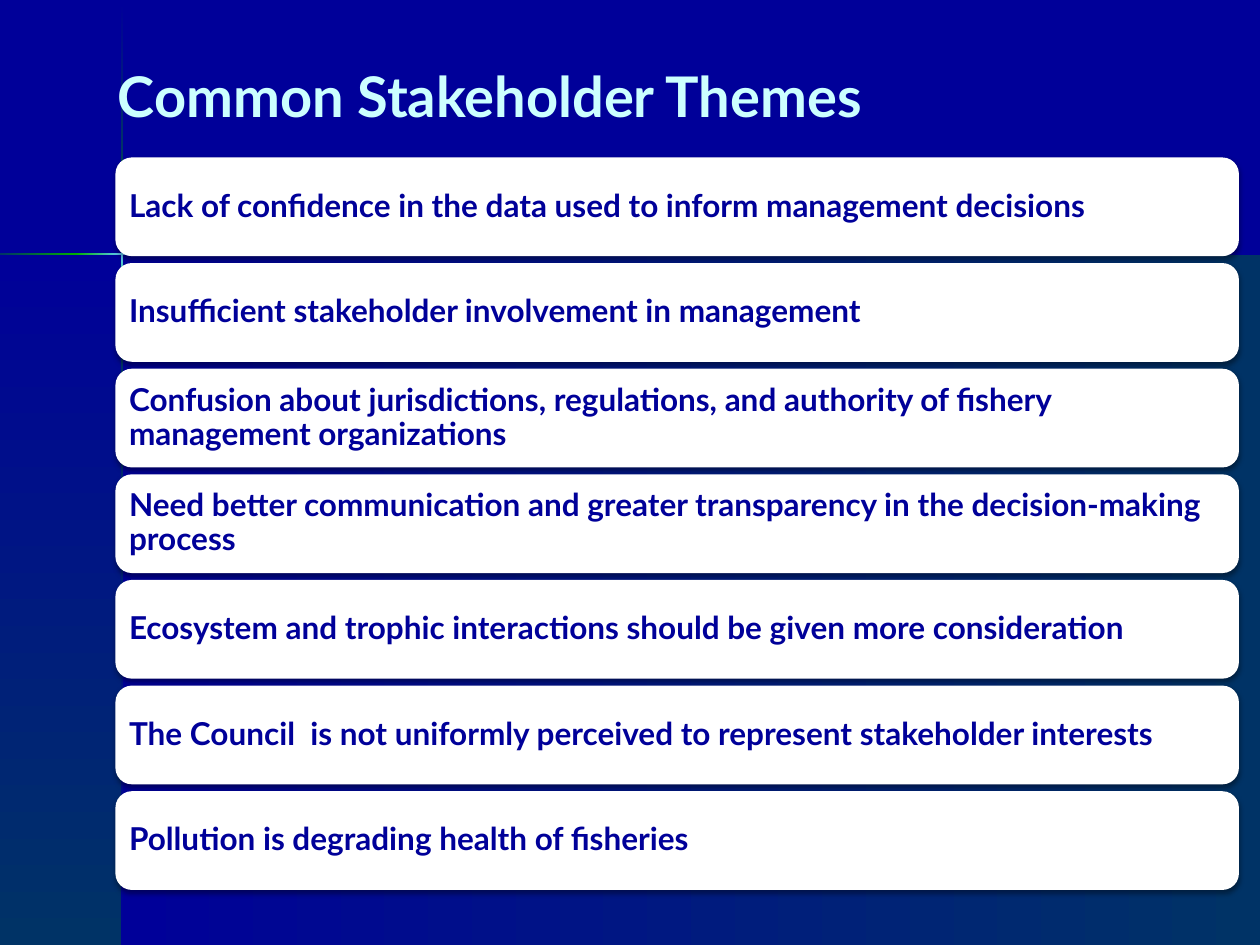
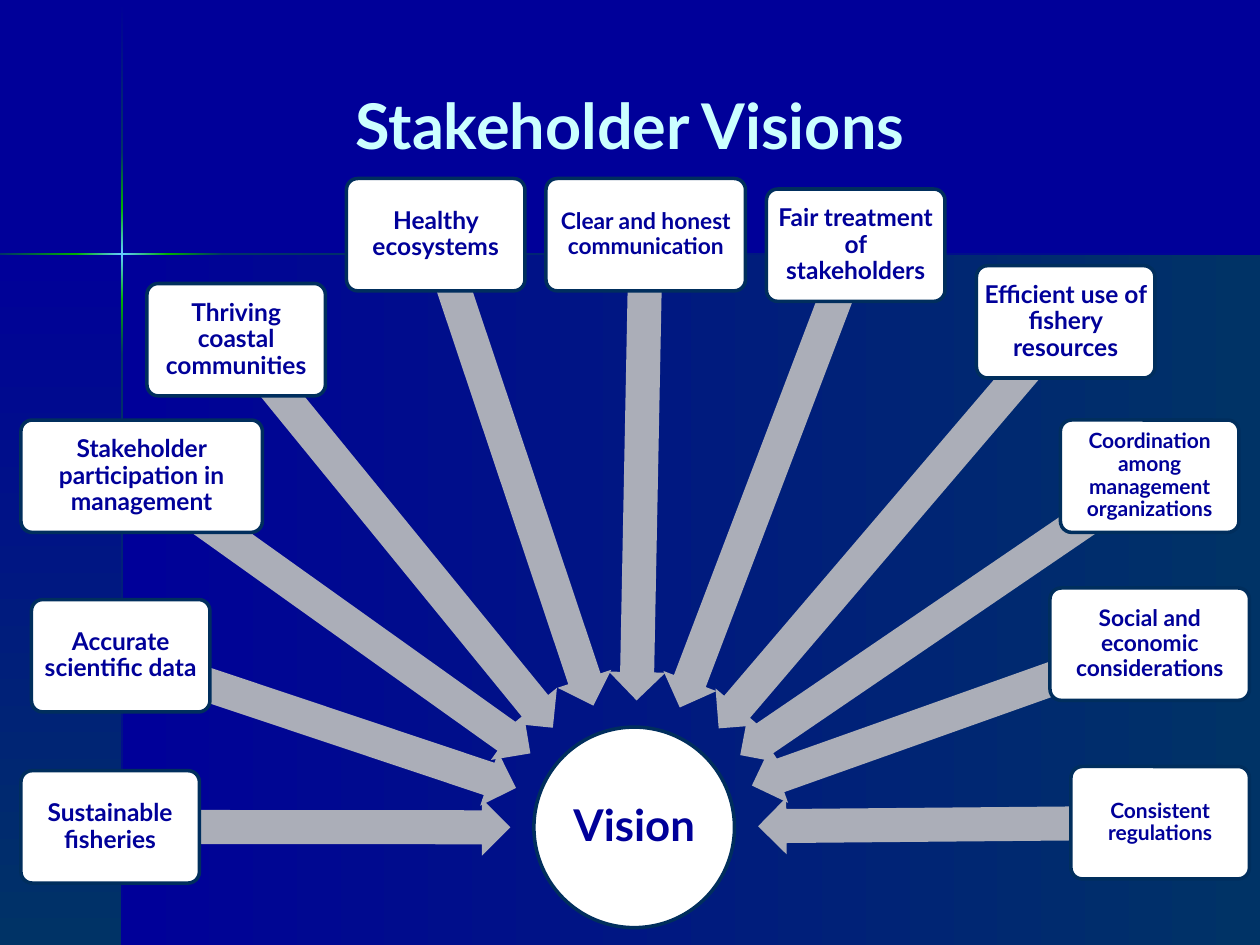
"""Build two slides on stakeholder themes and visions."""
from dataclasses import dataclass
from itertools import pairwise
from math import atan2, degrees, hypot

from lxml import etree
from pptx import Presentation
from pptx import util as u
from pptx.dml.color import RGBColor
from pptx.enum import shapes, text
from pptx.oxml import ns


@dataclass(frozen=True)
class Theme:
    """Colours, type and line sizes of the deck."""
    font: str = "Lato"
    navy: str = "000099"
    teal: str = "003366"
    green: str = "00B000"
    sky: str = "66CCFF"
    title: str = "CCFFFF"
    panel: str = "FFFFFF"
    outline: str = "002E5D"
    arrow: str = "ABAEB8"
    outline_pt: float = 2
    title_pt: int = 32
    big_title_pt: int = 36
    theme_pt: int = 18
    hub_pt: int = 25
    card_pt: int = 14
    card_mid_pt: int = 13
    card_small_pt: int = 12


T = Theme()
COLS, ROWS = 120, 90
CELL = u.Inches(10) // COLS
MSO = shapes.MSO_SHAPE
CENTER, LEFT = text.PP_ALIGN.CENTER, text.PP_ALIGN.LEFT

THEMES = [
    "Lack of confidence in the data used to inform management decisions",
    "Insufficient stakeholder involvement in management",
    "Confusion about jurisdictions, regulations, and authority of fishery management organizations",
    "Need better communication and greater transparency in the decision-making process",
    "Ecosystem and trophic interactions should be given more consideration",
    "The Council  is not uniformly perceived to represent stakeholder interests",
    "Pollution is degrading health of fisheries",
]

VISIONS = [
    ("Sustainable fisheries", 2, 73.4, 17, T.card_pt),
    ("Accurate scientific data", 3, 57.1, 17, T.card_pt),
    ("Stakeholder participation in management", 2, 40, 23, T.card_pt),
    ("Thriving coastal communities", 14, 27, 17, T.card_pt),
    ("Healthy ecosystems", 33, 17, 17, T.card_pt),
    ("Clear and honest communication", 52, 17, 19, T.card_mid_pt),
    ("Fair treatment of stakeholders", 73, 18, 17, T.card_pt),
    ("Efficient use of fishery resources", 93, 25.3, 17, T.card_pt),
    ("Coordination among management organizations", 101, 40, 17, T.card_small_pt),
    ("Social and economic considerations", 100, 56, 19, T.card_mid_pt),
    ("Consistent regulations", 102, 73, 17, T.card_small_pt),
]


def apply(obj, **values):
    """Set each given attribute on an object."""
    for name, value in values.items():
        setattr(obj, name, value)


def grid(*cells):
    """Turn grid columns and rows into lengths."""
    return [u.Emu(round(c * CELL)) for c in cells]


def add_panel(s, kind, box, fill=None, outline=None):
    """Add a flat preset shape on the grid."""
    sp = s.shapes.add_shape(kind, *grid(*box))
    sp.shadow.inherit = False
    if fill:
        sp.fill.solid()
        sp.fill.fore_color.rgb = RGBColor.from_string(fill)
    if outline:
        sp.line.color.rgb = RGBColor.from_string(outline)
        sp.line.width = u.Pt(T.outline_pt)
    else:
        sp.line.fill.background()
    return sp


def write(sp, words, size, color=T.navy, align=CENTER, inset=None, spacing=None):
    """Write one bold paragraph in the middle of a shape."""
    tf = sp.text_frame
    apply(tf, word_wrap=True, auto_size=text.MSO_AUTO_SIZE.NONE,
          vertical_anchor=text.MSO_ANCHOR.MIDDLE)
    if inset is not None:
        sides = ("left", "top", "right", "bottom")
        apply(tf, **{f"margin_{side}": u.Inches(inset) for side in sides})
    p = tf.paragraphs[0]
    apply(p, alignment=align, line_spacing=spacing)
    r = p.add_run()
    r.text = words
    apply(r.font, name=T.font, size=u.Pt(size), bold=True)
    r.font.color.rgb = RGBColor.from_string(color)


def add_gradient(s, box, colors, angle):
    """Add a rectangle with evenly spaced gradient colours."""
    sp = add_panel(s, MSO.RECTANGLE, box)
    sp.fill.gradient()
    sp.fill.gradient_angle = -angle % 360
    stops = next(sp.element.iter(ns.qn("a:gsLst")))
    for stop in list(stops):
        stops.remove(stop)
    for i, color in enumerate(colors):
        pos = 100000 * i // (len(colors) - 1)
        stop = etree.SubElement(stops, ns.qn("a:gs"), pos=str(pos))
        etree.SubElement(stop, ns.qn("a:srgbClr"), val=color)
    return sp


def add_shadow(sp):
    """Add a soft shadow below a shape."""
    effects = next(sp.element.iter(ns.qn("a:effectLst")))
    shadow = etree.SubElement(effects, ns.qn("a:outerShdw"), blurRad="40000",
                              dist="20000", dir="5400000", rotWithShape="0")
    color = etree.SubElement(shadow, ns.qn("a:srgbClr"), val="000000")
    etree.SubElement(color, ns.qn("a:alpha"), val="38000")


def decorate_master(prs, s):
    """Draw the bands and the glowing cross and move them to the master."""
    master = prs.slide_master
    master.background.fill.solid()
    master.background.fill.fore_color.rgb = RGBColor.from_string(T.navy)
    x, y, thick = 11.6, 24.2, 0.24
    decor = [add_gradient(s, (x, y, COLS - x, ROWS - y), (T.navy, T.teal), 0),
             add_gradient(s, (0, y, x, ROWS - y), (T.navy, T.teal), 90)]
    glow = [(T.navy, T.teal), (T.teal, T.green), (T.green, T.sky, T.green),
            (T.green, T.teal), (T.teal, T.navy)]
    for (top, end), colors in zip(pairwise((0.1, 14.5, 19.8, 28.6, 33.8, ROWS)), glow):
        box = (x - thick / 2, top, thick, end - top)
        decor.append(add_gradient(s, box, colors, 90))
    for (left, end), colors in zip(pairwise((0, 7.25, 16, 21.2, COLS)), glow[1:]):
        box = (left, y - thick / 2, end - left, thick)
        decor.append(add_gradient(s, box, colors, 0))
    for i, sp in enumerate(decor):
        sp.element.nvSpPr.cNvPr.set("id", str(100 + i))
        master.element.cSld.spTree.insert(2 + i, sp.element)


def add_slide(prs, words, box, size, align):
    """Add a slide with a formatted title."""
    s = prs.slides.add_slide(prs.slide_layouts[5])
    title = s.shapes.title
    apply(title, **dict(zip(("left", "top", "width", "height"), grid(*box))))
    write(title, words, size, T.title, align)
    return s


def add_theme_bars(s):
    """Stack the themes as equal bars."""
    top, pitch, height = 15, 10.06, 9.4
    for i, words in enumerate(THEMES):
        sp = add_panel(s, MSO.ROUNDED_RECTANGLE, (11, top + i * pitch, 107, height), T.panel)
        add_shadow(sp)
        write(sp, words, T.theme_pt, align=LEFT, inset=0.07, spacing=0.9)


def add_arrow(s, start, hub, radius):
    """Point an arrow from a card's centre to just outside the hub."""
    thick, gap_share = 5.4, 0.045
    dx, dy = hub[0] - start[0], hub[1] - start[1]
    dist = hypot(dx, dy)
    length = dist * (1 - gap_share) - radius
    share = length / dist / 2
    mid_x, mid_y = start[0] + dx * share, start[1] + dy * share
    box = (mid_x - length / 2, mid_y - thick / 2, length, thick)
    sp = add_panel(s, MSO.LEFT_ARROW, box, T.arrow)
    sp.adjustments[0], sp.adjustments[1] = 0.6, 0.5
    sp.rotation = (degrees(atan2(dy, dx)) + 180) % 360


def add_vision_wheel(s):
    """Add the hub with cards pointing at it."""
    size, height = 19.1, 10.7
    hub = (60.4, 78.8)
    box = (hub[0] - size / 2, hub[1] - size / 2, size, size)
    sp = add_panel(s, MSO.OVAL, box, T.panel, T.outline)
    write(sp, "Vision", T.hub_pt, inset=0.02, spacing=0.9)
    for words, x, y, width, points in VISIONS:
        add_arrow(s, (x + width / 2, y + height / 2), hub, size / 2)
        card = add_panel(s, MSO.ROUNDED_RECTANGLE, (x, y, width, height), T.panel, T.outline)
        card.adjustments[0] = 0.1
        write(card, words, points, inset=0.03, spacing=0.9)


def main():
    """Build and save the deck."""
    prs = Presentation()
    prs.slide_width, prs.slide_height = grid(COLS, ROWS)
    s = add_slide(prs, "Common Stakeholder Themes", (10, 4.3, 92.4, 9.6), T.title_pt, LEFT)
    decorate_master(prs, s)
    add_theme_bars(s)
    s = add_slide(prs, "Stakeholder Visions", (1.7, 7.6, 116.6, 8.4), T.big_title_pt, CENTER)
    add_vision_wheel(s)
    prs.save("out.pptx")


if __name__ == "__main__":
    main()
